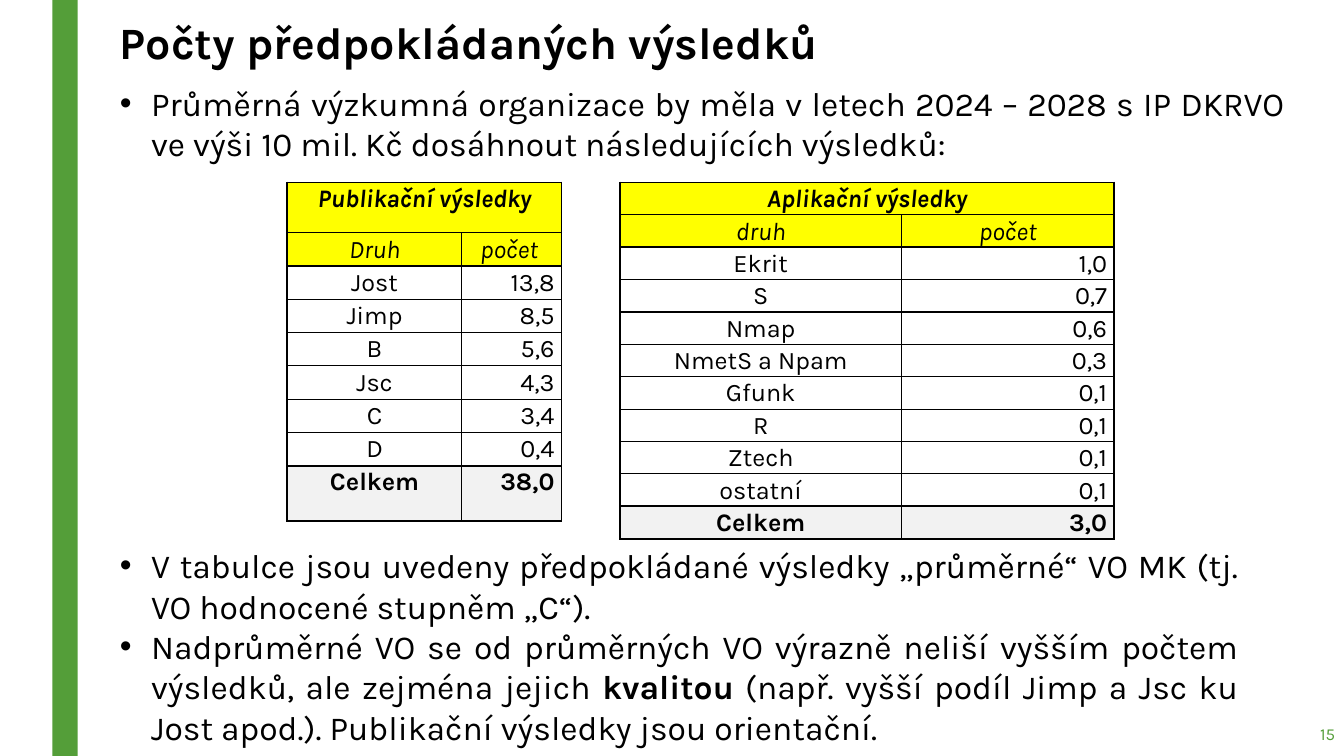
from dataclasses import dataclass

from lxml import etree
from pptx import Presentation
from pptx.dml.color import RGBColor
from pptx.enum.shapes import MSO_SHAPE
from pptx.enum.text import MSO_ANCHOR, MSO_AUTO_SIZE, PP_ALIGN
from pptx.oxml.ns import qn
from pptx.util import Pt

PX = 9144
FONT = "Karla"
GREEN = RGBColor(0x54, 0x9E, 0x39)
BLACK = RGBColor(0, 0, 0)
YELLOW = RGBColor(0xFF, 0xFF, 0)
GREY = RGBColor(0xF2, 0xF2, 0xF2)
RECTANGLE = MSO_SHAPE.RECTANGLE
TOP, MIDDLE = MSO_ANCHOR.TOP, MSO_ANCHOR.MIDDLE
GROW, FIXED = MSO_AUTO_SIZE.SHAPE_TO_FIT_TEXT, MSO_AUTO_SIZE.NONE
CENTER, RIGHT, JUSTIFY = PP_ALIGN.CENTER, PP_ALIGN.RIGHT, PP_ALIGN.JUSTIFY
THIN, THICK = Pt(1), Pt(1.5)
BULLET_INDENT = 31 * PX


@dataclass
class Span:
    text: str
    bold: bool = False
    italic: bool = False


@dataclass
class TextBlock:
    place: tuple[int, int, int, int]
    paragraphs: list[list[Span]]
    size: int
    bulleted: bool = False
    align: PP_ALIGN = JUSTIFY
    color: RGBColor = BLACK
    anchor: MSO_ANCHOR = TOP
    fit: MSO_AUTO_SIZE = GROW


@dataclass
class ResultTable:
    left: int
    columns: list[int]
    title_height: int
    row_height: int
    total_height: int
    title: str
    header: tuple[str, str]
    results: list[tuple[str, str]]
    total: str


TEXTS = [
    TextBlock((109, 10, 894, 94), [[Span("Počty předpokládaných výsledků", bold=True)]], 32),
    TextBlock((109, 77, 1175, 121), [[Span(
        "Průměrná výzkumná organizace by měla v letech 2024 – 2028 s IP DKRVO "
        "ve výši 10 mil. Kč dosáhnout následujících výsledků:")]], 24, bulleted=True),
    TextBlock((109, 536, 1129, 283), [
        [Span("V tabulce jsou uvedeny předpokládané výsledky „průměrné“ VO MK "
              "(tj. VO hodnocené stupněm „C“).")],
        [Span("Nadprůměrné VO se od průměrných VO výrazně neliší vyšším počtem výsledků, "
              "ale zejména jejich "),
         Span("kvalitou", bold=True),
         Span(" (např. vyšší podíl Jimp a Jsc ku Jost apod.). "
              "Publikační výsledky jsou orientační.")],
    ], 24, bulleted=True),
    TextBlock((1159, 706, 175, 44), [[Span("15")]], 12, align=RIGHT, color=GREEN,
              anchor=MIDDLE, fit=FIXED),
]

TABLE_TOP = 181
TABLES = [
    ResultTable(285, [173, 99], 50, 33, 55, "Publikační výsledky", ("Druh", "počet "),
                [("Jost", "13,8"), ("Jimp", "8,5"), ("B", "5,6"), ("Jsc", "4,3"),
                 ("C", "3,4"), ("D", "0,4")], "38,0"),
    ResultTable(615, [279, 211], 32, 32, 32, "Aplikační výsledky", ("druh", "počet"),
                [("Ekrit", "1,0"), ("S", "0,7"), ("Nmap", "0,6"), ("NmetS a Npam", "0,3"),
                 ("Gfunk", "0,1"), ("R", "0,1"), ("Ztech", "0,1"), ("ostatní", "0,1")], "3,0"),
]


def set_all(target, values: dict) -> None:
    for name, value in values.items():
        setattr(target, name, value)


def add_span(para, span: Span, size: int, color: RGBColor) -> None:
    run = para.add_run()
    run.text = span.text
    set_all(run.font, {"name": FONT, "size": Pt(size), "bold": span.bold, "italic": span.italic})
    run.font.color.rgb = color


def add_bullet(para) -> None:
    properties = para._p.get_or_add_pPr()
    properties.set("marL", str(BULLET_INDENT))
    properties.set("indent", str(-BULLET_INDENT))
    etree.SubElement(properties, qn("a:buFont")).set("typeface", "Arial")
    etree.SubElement(properties, qn("a:buChar")).set("char", "•")


def draw_text(page, block: TextBlock) -> None:
    box = page.shapes.add_textbox(*(length * PX for length in block.place))
    frame = box.text_frame
    set_all(frame, {"word_wrap": True, "auto_size": block.fit, "vertical_anchor": block.anchor})
    for index, spans in enumerate(block.paragraphs):
        para = frame.add_paragraph() if index else frame.paragraphs[0]
        para.alignment = block.align
        if block.bulleted:
            add_bullet(para)
        for span in spans:
            add_span(para, span, block.size, block.color)


def set_borders(cell, widths: dict[str, int]) -> None:
    properties = cell._tc.get_or_add_tcPr()
    for side, width in widths.items():
        line = etree.SubElement(properties, qn(f"a:ln{side}"))
        line.set("w", str(width))
        fill = etree.SubElement(line, qn("a:solidFill"))
        etree.SubElement(fill, qn("a:srgbClr")).set("val", str(BLACK))


def draw_table(page, spec_table: ResultTable) -> None:
    rows = [(spec_table.title, ""), spec_table.header, *spec_table.results,
            ("Celkem", spec_table.total)]
    last = len(rows) - 1
    heights = [spec_table.title_height, *[spec_table.row_height] * (last - 1),
               spec_table.total_height]
    grid = page.shapes.add_table(len(rows), 2, spec_table.left * PX, TABLE_TOP * PX,
                                 sum(spec_table.columns) * PX, sum(heights) * PX).table
    set_all(grid, {"first_row": False, "horz_banding": False})
    for column, width in zip(grid.columns, spec_table.columns):
        column.width = width * PX
    for row, height in zip(grid.rows, heights):
        row.height = height * PX
    grid.cell(0, 0).merge(grid.cell(0, 1))

    for r, texts in enumerate(rows):
        for c, text in enumerate(texts):
            cell = grid.cell(r, c)
            set_all(cell, {"margin_left": 7 * PX, "margin_right": 7 * PX,
                           "margin_top": 0, "margin_bottom": 0, "vertical_anchor": TOP})
            set_borders(cell, {
                "L": THICK if r == 0 or c == 0 else THIN,
                "R": THICK if r == 0 or c == 1 else THIN,
                "T": THICK if r in (0, 2, last) else THIN,
                "B": THICK if r in (1, last - 1, last) else THIN,
            })
            if r < 2 or r == last:
                cell.fill.solid()
                cell.fill.fore_color.rgb = YELLOW if r < 2 else GREY
            else:
                cell.fill.background()
            if text:
                para = cell.text_frame.paragraphs[0]
                set_all(para, {"alignment": RIGHT if r > 1 and c == 1 else CENTER,
                               "line_spacing": 1.07, "space_before": Pt(3),
                               "space_after": Pt(8)})
                add_span(para, Span(text, bold=r in (0, last), italic=r < 2), 18, BLACK)


def main() -> None:
    deck = Presentation()
    set_all(deck, {"slide_width": 1333 * PX, "slide_height": 750 * PX})
    page = deck.slides.add_slide(deck.slide_layouts[6])
    bar = page.shapes.add_shape(RECTANGLE, 52 * PX, 0, 25 * PX, 750 * PX)
    bar.shadow.inherit = False
    bar.fill.solid()
    bar.fill.fore_color.rgb = GREEN
    bar.line.fill.background()
    for block in TEXTS[:2]:
        draw_text(page, block)
    for result_table in TABLES:
        draw_table(page, result_table)
    for block in TEXTS[2:]:
        draw_text(page, block)
    deck.save("out.pptx")


if __name__ == "__main__":
    main()
